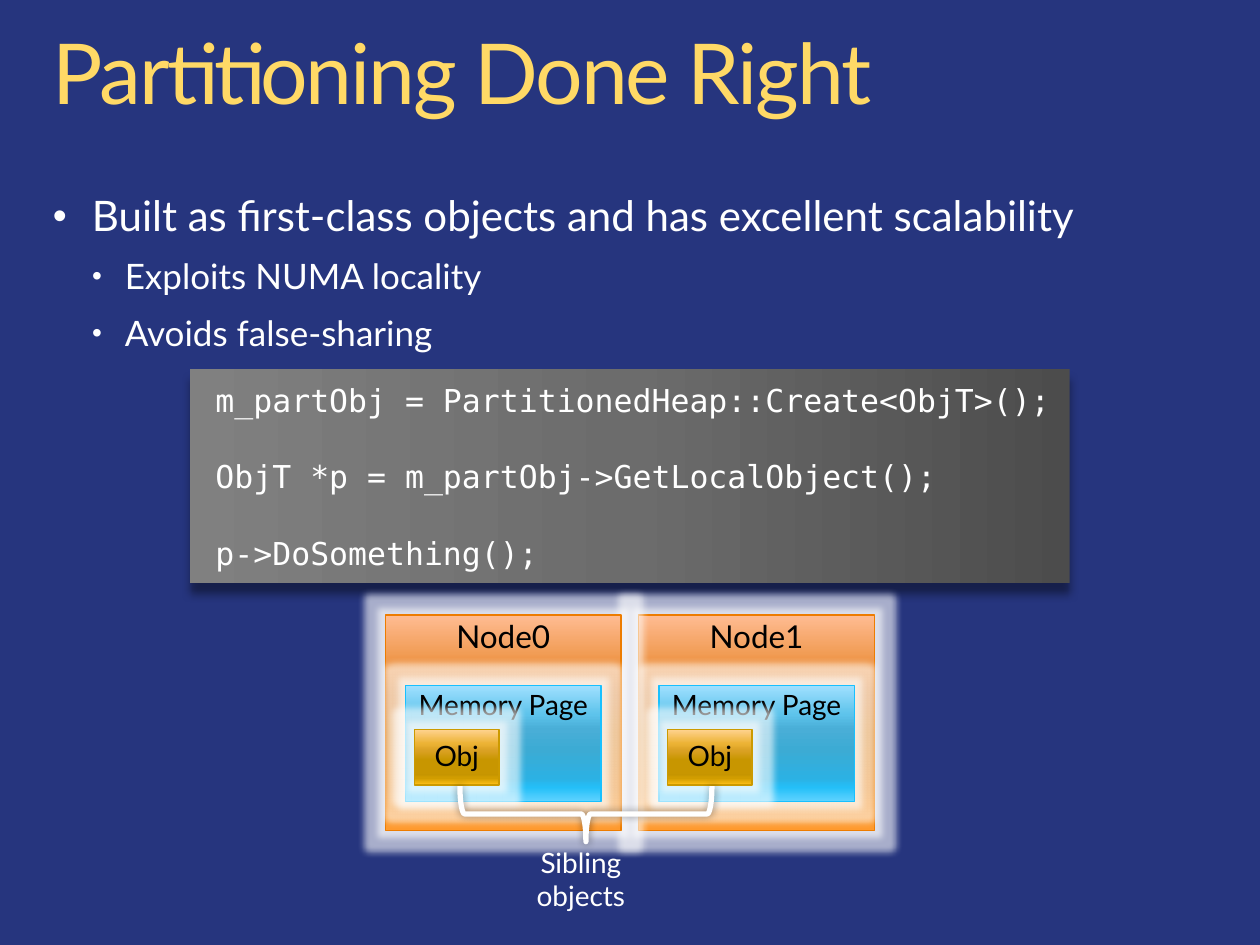
from lxml.etree import SubElement
from pptx import Presentation
from pptx.dml.color import RGBColor
from pptx.enum.shapes import MSO_SHAPE
from pptx.enum.text import MSO_ANCHOR, PP_ALIGN
from pptx.oxml.ns import qn
from pptx.util import Inches, Pt

# Content
TITLE = "Partitioning Done Right"
BULLETS = [
    (0, "Built as first-class objects and has excellent scalability"),
    (1, "Exploits NUMA locality"),
    (1, "Avoids false-sharing"),
]
CODE = [
    "m_partObj = PartitionedHeap::Create<ObjT>();",
    "ObjT *p = m_partObj->GetLocalObject();",
    "p->DoSomething();",
]
NODES = ["Node0", "Node1"]
CAPTION = "Sibling objects"

# Style
SANS, MONO = "Lato", "DejaVu Sans Mono"
COLORS = {"back": "26357E", "white": "FFFFFF", "black": "000000",
          "node": "ED7C00", "page": "18C0FF", "obj": "CC9A00"}
GLOSS = (0, 25, 38, 55, 80, 88, 100)
FADES = {
    "title": ((0, 41, 100), "FFF2CC FFD966 FFC000"),
    "code": ((0, 50, 100), "4C4C4C 6C6C6C 808080"),
    "node": (GLOSS, "FFBC93 EC903D D97E2B D8790F E67800 F27F00 FF9A2E"),
    "page": (GLOSS, "A0E0FF 5DC3EB 49AED7 3CABD4 2CB1E3 24BFF8 5FD3FF"),
    "obj": (GLOSS, "FFD390 ECB335 DAA123 C89600 C69500 D19D00 FFC018"),
}
# Bullet level: text indent, hanging, font size, space before, bullet percent
LEVELS = [(0.31, 0.31, 24, 11.7, 95), (0.57, 0.26, 20, 10.8, 80)]
# Nested box: offset from its node, size, label size, anchor
BOXES = {
    "node": (0, 0, 1.87, 1.71, 18, MSO_ANCHOR.TOP),
    "page": (0.16, 0.56, 1.55, 0.92, 16, MSO_ANCHOR.TOP),
    "obj": (0.23, 0.91, 0.67, 0.44, 16, MSO_ANCHOR.MIDDLE),
}
LEFT, TOP, STEP = 3.06, 4.88, 2.01


def rgb(name):
    return RGBColor.from_string(COLORS[name])


def sub(node, tag, **attrs):
    return SubElement(node, qn(tag), {k: str(v) for k, v in attrs.items()})


def fade(fill, holder, name, angle):
    """Gradient with any number of stops; angle is clockwise."""
    fill.gradient()
    fill.gradient_angle = 360 - angle
    stops = holder.find(".//" + qn("a:gsLst"))
    for old in list(stops):
        stops.remove(old)
    places, hues = FADES[name]
    for place, hue in zip(places, hues.split()):
        stop = sub(stops, "a:gs", pos=place * 1000)
        sub(stop, "a:srgbClr", val=hue)


def effect(shape, tag, color, alpha, **attrs):
    shape.shadow.inherit = False
    effects = shape._element.spPr.find(qn("a:effectLst"))
    hue = sub(sub(effects, tag, **attrs), "a:srgbClr", val=COLORS[color])
    sub(hue, "a:alpha", val=alpha * 1000)


def shade(shape, blur, dist, angle):
    effect(shape, "a:outerShdw", "black", 40, blurRad=Pt(blur),
           dist=Pt(dist), dir=angle * 60000, algn="ctr", rotWithShape=0)


def write(para, text, size, color="white", font=SANS):
    run = para.add_run()
    run.text = text
    run.font.size, run.font.name = Pt(size), font
    run.font.color.rgb = rgb(color)
    return run


def place(shape, *box):
    shape.left, shape.top, shape.width, shape.height = map(Inches, box)
    frame = shape.text_frame
    frame.margin_left = frame.margin_right = 0
    frame.margin_top = frame.margin_bottom = 0
    frame.vertical_anchor = MSO_ANCHOR.TOP
    frame.word_wrap = True
    return frame


def rect(shapes, *box):
    return shapes.add_shape(MSO_SHAPE.RECTANGLE, *map(Inches, box))


def add_node(slide, left, name):
    group = slide.shapes.add_group_shape()
    labels = {"node": name, "page": "Memory Page", "obj": "Obj"}
    for kind, (dx, dy, wide, high, size, anchor) in BOXES.items():
        box = rect(group.shapes, left + dx, TOP + dy, wide, high)
        fade(box.fill, box._element.spPr, kind, 90)
        box.line.color.rgb, box.line.width = rgb(kind), Pt(0.75)
        effect(box, "a:glow", "white", 60, rad=Pt(8))
        frame = box.text_frame
        frame.vertical_anchor = anchor
        para = frame.paragraphs[0]
        para.alignment, para.line_spacing = PP_ALIGN.CENTER, 0.9
        write(para, labels[kind], size, "black")


def main():
    deck = Presentation()
    deck.slide_width, deck.slide_height = Inches(10), Inches(7.5)
    slide = deck.slides.add_slide(deck.slide_layouts[1])
    slide.background.fill.solid()
    slide.background.fill.fore_color.rgb = rgb("back")

    # Title
    para = place(slide.shapes.title, 0.42, 0.25, 9.16, 0.73).paragraphs[0]
    para.alignment, para.line_spacing = PP_ALIGN.LEFT, 0.9
    run = write(para, TITLE, 48)
    fade(run.font.fill, run._r, "title", 90)
    run._r.rPr.set("spc", "-120")

    # Bullets
    frame = place(slide.placeholders[1], 0.42, 1.55, 9.16, 1.28)
    for i, (level, text) in enumerate(BULLETS):
        para = frame.add_paragraph() if i else frame.paragraphs[0]
        indent, hang, size, gap, scale = LEVELS[level]
        props = para._p.get_or_add_pPr()
        props.set("marL", str(Inches(indent)))
        props.set("indent", str(-Inches(hang)))
        sub(sub(props, "a:buClr"), "a:srgbClr", val=COLORS["white"])
        sub(props, "a:buSzPct", val=scale * 1000)
        sub(props, "a:buFont", typeface="Arial")
        sub(props, "a:buChar", char="•")
        para.level, para.line_spacing = level, 0.9
        para.space_before = Pt(gap if i else 0)
        write(para, text, size)

    # Code panel
    panel = rect(slide.shapes, 1.51, 2.93, 6.98, 1.7)
    fade(panel.fill, panel._element.spPr, "code", 180)
    panel.line.fill.background()
    shade(panel, 5, 6, 88)
    frame = panel.text_frame
    frame.margin_left = Inches(0.2)
    frame.vertical_anchor = MSO_ANCHOR.MIDDLE
    for i, text in enumerate(CODE):
        para = frame.add_paragraph() if i else frame.paragraphs[0]
        para.alignment = PP_ALIGN.LEFT
        para.space_before = Pt(22 if i else 0)
        write(para, text, 18, font=MONO)

    # Nodes, right one at the back
    for i in reversed(range(len(NODES))):
        add_node(slide, LEFT + i * STEP, NODES[i])

    # Brace joining the two objects
    brace = slide.shapes.add_shape(
        MSO_SHAPE.RIGHT_BRACE, *map(Inches, (4.43, 5.46, 0.44, 2)))
    brace.rotation = 90
    brace.adjustments[0], brace.adjustments[1] = 0.083, 0.5
    brace.fill.background()
    brace.line.color.rgb, brace.line.width = rgb("white"), Pt(3)
    shade(brace, 5, 0, 0)

    # Caption
    note = slide.shapes.add_textbox(*map(Inches, (3.92, 6.66, 1.38, 0.3)))
    note.text_frame.word_wrap = True
    para = note.text_frame.paragraphs[0]
    para.alignment = PP_ALIGN.CENTER
    write(para, CAPTION, 16)

    deck.save("out.pptx")


if __name__ == "__main__":
    main()
